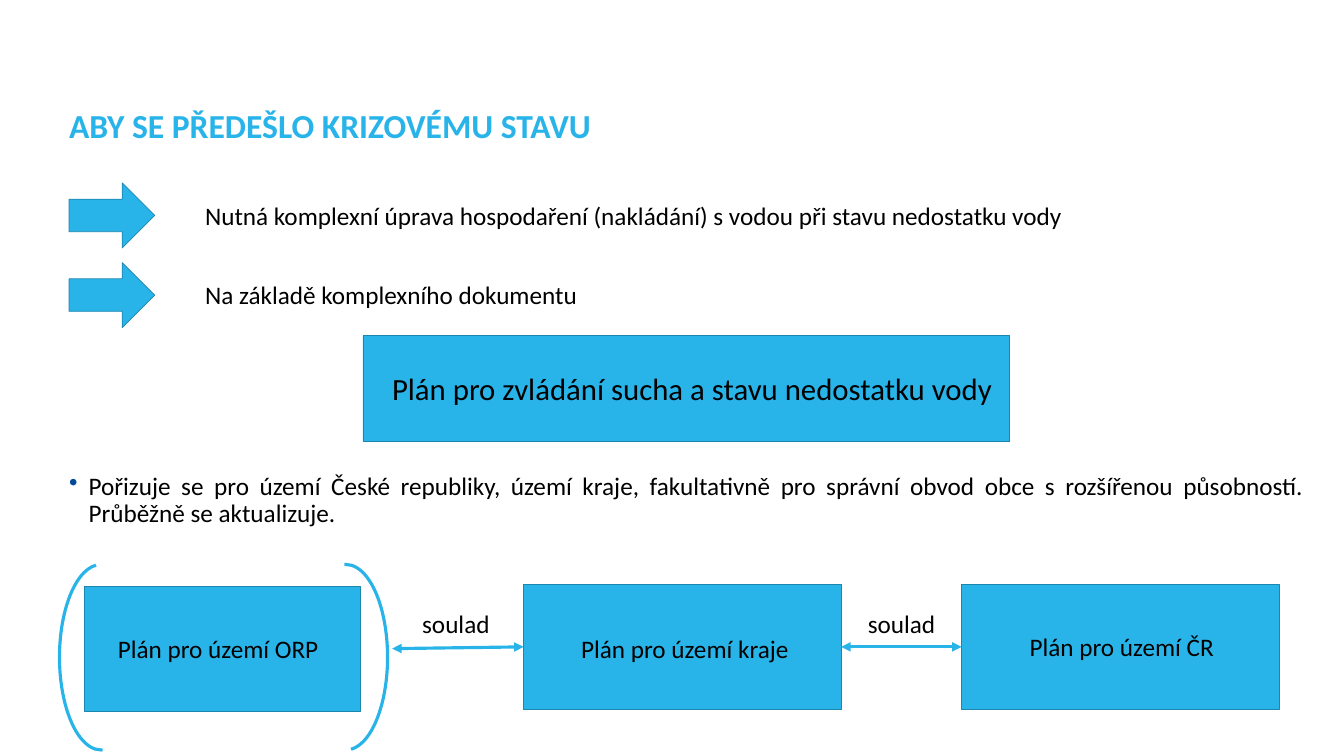
from lxml import etree
from pptx import Presentation
from pptx import util as u
from pptx.dml.color import RGBColor
from pptx.enum import shapes, text
from pptx.oxml.ns import qn

BLUE = RGBColor(0x29, 0xB4, 0xE9)
EDGE = RGBColor(0x1E, 0x85, 0xAC)
BLACK = RGBColor(0, 0, 0)
BULLET = "004A99"
COLS, ROWS = 80, 45
KIND = shapes.MSO_SHAPE
ALIGN = text.PP_ALIGN


def write(frame, words, size=36, color=BLACK, bold=False, align=ALIGN.LEFT,
          inset=None, spacing=None, bullet=False):
    frame.word_wrap = True
    if inset is not None:
        frame.margin_left = frame.margin_right = u.Inches(inset)
        frame.margin_top = frame.margin_bottom = u.Inches(inset)
    par = frame.paragraphs[0]
    par.text = words
    par.alignment = align
    if spacing:
        par.line_spacing = spacing
    if bullet:
        props = par._p.get_or_add_pPr()
        indent = u.Inches(0.39)
        props.set("marL", str(indent))
        props.set("indent", str(-indent))
        tint = etree.SubElement(props, qn("a:buClr"))
        etree.SubElement(tint, qn("a:srgbClr"), val=BULLET)
        etree.SubElement(props, qn("a:buChar"), char="•")
    font = par.runs[0].font
    font.name, font.size, font.bold = "Calibri", u.Pt(size), bold
    font.color.rgb = color


class Board:
    def __init__(self, deck):
        self.slide = deck.slides.add_slide(deck.slide_layouts[6])
        self.col = deck.slide_width / COLS
        self.row = deck.slide_height / ROWS

    def place(self, x, y, w, h):
        return (round(x * self.col), round(y * self.row),
                round(w * self.col), round(h * self.row))

    def label(self, x, y, w, words, h=2.13, **style):
        box = self.slide.shapes.add_textbox(*self.place(x, y, w, h))
        write(box.text_frame, words, **style)

    def block(self, kind, x, y, w, h):
        shape = self.slide.shapes.add_shape(kind, *self.place(x, y, w, h))
        shape.shadow.inherit = False
        shape.fill.solid()
        shape.fill.fore_color.rgb = BLUE
        shape.line.color.rgb = EDGE
        shape.line.width = u.Pt(1)
        return shape

    def bracket(self, x, y, w, h, turn):
        arc = self.block(KIND.ARC, x, y, w, h)
        arc.adjustments[0] = 161.44
        arc.adjustments[1] = 52.11
        arc.rotation = turn
        arc.fill.background()
        arc.line.color.rgb = BLUE
        arc.line.width = u.Pt(4.5)

    def link(self, x, y, target, source=None):
        left, top, _, _ = self.place(x, y, 0, 0)
        line = self.slide.shapes.add_connector(
            shapes.MSO_CONNECTOR.STRAIGHT, left, top, left, top)
        if source is not None:
            line.begin_connect(source, 3)
        line.end_connect(target, 1)
        line.line.color.rgb = BLUE
        line.line.width = u.Pt(4.5)
        stroke = line.line._get_or_add_ln()
        for end in ("a:headEnd", "a:tailEnd"):
            etree.SubElement(stroke, qn(end), type="triangle")
        etree.SubElement(line._element.spPr, qn("a:effectLst"))


def main():
    deck = Presentation()
    deck.slide_width, deck.slide_height = u.Inches(26.67), u.Inches(15)
    board = Board(deck)
    left = 4.11

    board.label(left, 6.51, 71.82, "ABY SE PŘEDEŠLO KRIZOVÉMU STAVU", h=4.02,
                size=48, color=BLUE, bold=True, inset=0, spacing=0.9)

    points = (
        (56.19, "Nutná komplexní úprava hospodaření (nakládání) s vodou při stavu nedostatku vody"),
        (40.71, "Na základě komplexního dokumentu"),
    )
    for i, (width, words) in enumerate(points):
        top = 10.89 + i * 4.74
        board.block(KIND.RIGHT_ARROW, left, top, 5.1, 3.87)
        board.label(11.91, top + 0.87, width, words)

    board.block(KIND.RECTANGLE, 21.6, 19.98, 38.49, 6.3)
    board.label(23.04, 21.87, 46.11, "Plán pro zvládání sucha a stavu nedostatku vody",
                h=2.52, size=44)

    board.label(left, 28.17, 73.5,
                "Pořizuje se pro území České republiky, území kraje, fakultativně pro "
                "správní obvod obce s rozšířenou působností. Průběžně se aktualizuje.",
                h=4, align=ALIGN.JUSTIFY, inset=0, spacing=0.9, bullet=True)

    plans = (
        (5.01, 34.92, 16.44, 6.72, 37.53, 13.5, "Plán pro území ORP"),
        (31.17, 34.8, 18.9, 34.29, 37.53, 13.11, "Plán pro území kraje"),
        (57.24, 34.8, 18.9, 60.99, 37.44, 14.4, "Plán pro území ČR"),
    )
    boxes = []
    for x, y, w, tx, ty, tw, words in plans:
        boxes.append(board.block(KIND.RECTANGLE, x, y, w, 7.41))
        board.label(tx, ty, tw, words)
    _, region, state = boxes

    board.link(23.34, 38.61, region)
    board.link(50.07, 38.5, state, source=region)
    for x, w, align in ((22.53, 9.21, ALIGN.CENTER), (51.36, 5.19, ALIGN.LEFT)):
        board.label(x, 36.09, w, "soulad", align=align)

    for x, turn in ((18.12, 0), (3.54, 180)):
        board.bracket(x, 33.6, 4.95, 11.04, turn)

    deck.save("out.pptx")


if __name__ == "__main__":
    main()
